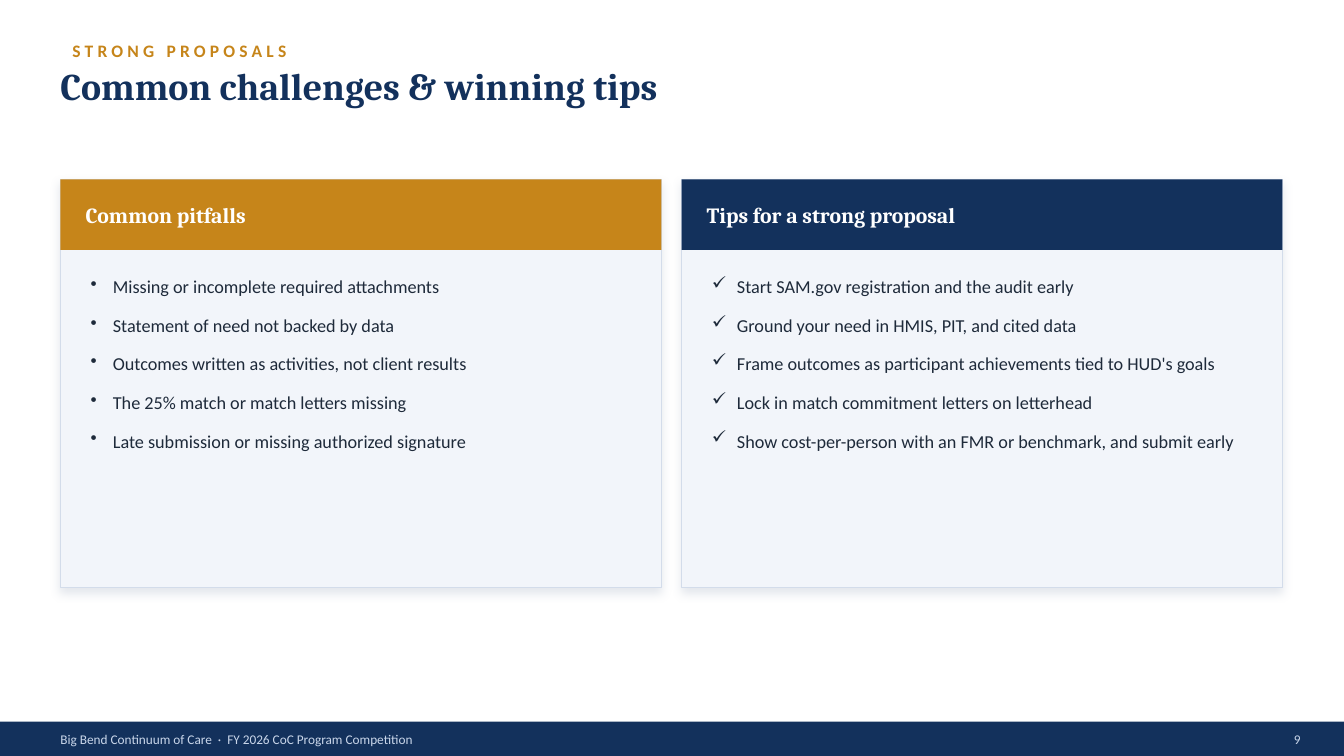
from lxml.etree import SubElement
from pptx import Presentation
from pptx.dml.color import RGBColor
from pptx.enum.shapes import MSO_SHAPE
from pptx.enum.text import MSO_ANCHOR, PP_ALIGN
from pptx.oxml.ns import qn
from pptx.util import Pt

PX = 9144  # EMU per px, 100 px to the inch
PAGE_WIDTH, PAGE_HEIGHT = 1333, 750
MARGIN = 60
NAVY, GOLD, WHITE = "13315C", "C6851A", "FFFFFF"
PANEL, BORDER, SHADOW = "F2F5FA", "D3DCEA", "9AA7BC"
INK, FOOTER_INK = "1E2A3A", "C9D6EA"

PITFALLS = [
    "Missing or incomplete required attachments",
    "Statement of need not backed by data",
    "Outcomes written as activities, not client results",
    "The 25% match or match letters missing",
    "Late submission or missing authorized signature",
]
TIPS = [
    "Start SAM.gov registration and the audit early",
    "Ground your need in HMIS, PIT, and cited data",
    "Frame outcomes as participant achievements tied to HUD's goals",
    "Lock in match commitment letters on letterhead",
    "Show cost-per-person with an FMR or benchmark, and submit early",
]


def color(hex_string):
    return RGBColor.from_string(hex_string)


def scaled(box):
    return [length * PX for length in box]


def add_rect(page, box, fill, line=None):
    rect = page.shapes.add_shape(MSO_SHAPE.RECTANGLE, *scaled(box))
    rect.shadow.inherit = False
    rect.fill.solid()
    rect.fill.fore_color.rgb = color(fill)
    if line:
        rect.line.color.rgb = color(line)
        rect.line.width = Pt(1)
    else:
        rect.line.fill.background()
    return rect


def add_soft_shadow(shape):
    effects = shape._element.spPr.find(qn("a:effectLst"))
    shadow = SubElement(effects, qn("a:outerShdw"), blurRad=str(Pt(7)),
                        dist=str(Pt(3)), dir="5400000", algn="bl",
                        rotWithShape="0")
    tint = SubElement(shadow, qn("a:srgbClr"), val=SHADOW)
    SubElement(tint, qn("a:alpha"), val="28000")


def add_bullet(para, mark, indent):
    properties = para._p.get_or_add_pPr()
    properties.set("marL", str(indent * PX))
    properties.set("indent", str(-indent * PX))
    SubElement(properties, qn("a:buChar"), char=mark)


def add_text(page, box, lines, size, ink, name="Calibri", bold=False,
             anchor=MSO_ANCHOR.MIDDLE, align=PP_ALIGN.LEFT, inset=0,
             bullet=None, gap=0):
    frame = page.shapes.add_textbox(*scaled(box)).text_frame
    frame.word_wrap = True
    frame.vertical_anchor = anchor
    frame.margin_left = frame.margin_right = inset * PX
    frame.margin_top = frame.margin_bottom = 0
    frame.text = "\n".join(lines)
    for para in frame.paragraphs:
        para.alignment = align
        if gap:
            para.space_after = Pt(gap)
        if bullet:
            add_bullet(para, *bullet)
        para.font.size = Pt(size)
        para.font.name = name
        para.font.bold = bold
        para.font.color.rgb = color(ink)
    return frame


def add_heading(page, box):
    left, top, width, height = box
    # Letter-spaced line above the title
    eyebrow = add_text(page, (left + 2, top, 1100, 32), ["STRONG PROPOSALS"],
                       12.5, GOLD, bold=True, inset=10)
    span = eyebrow.paragraphs[0].runs[0]
    span._r.get_or_add_rPr().set("spc", "300")
    # Title
    add_text(page, (left, top + 28, width, height - 28),
             ["Common challenges & winning tips"], 27, NAVY, "Cambria",
             bold=True, anchor=MSO_ANCHOR.TOP)


def add_card(page, box, title, accent, items, bullet):
    left, top, width, height = box
    add_soft_shadow(add_rect(page, box, PANEL, BORDER))
    # Header band
    add_rect(page, (left, top, width, 70), accent)
    add_text(page, (left + 25, top, width - 50, 70), [title], 15.5, WHITE,
             "Cambria", bold=True)
    # Bulleted list
    add_text(page, (left + 30, top + 95, width - 60, height - 120), items,
             13, INK, anchor=MSO_ANCHOR.TOP, bullet=bullet, gap=12)


def add_footer(page, box):
    left, top, width, height = box
    add_rect(page, box, NAVY)
    add_text(page, (left + MARGIN, top, 900, height),
             ["Big Bend Continuum of Care  ·  FY 2026 CoC Program Competition"],
             9.5, FOOTER_INK)
    # Page number
    add_text(page, (left + width - 93, top, 50, height), ["9"], 9.5,
             FOOTER_INK, align=PP_ALIGN.RIGHT)


def main():
    deck = Presentation()
    deck.slide_width, deck.slide_height = scaled((PAGE_WIDTH, PAGE_HEIGHT))
    page = deck.slides.add_slide(deck.slide_layouts[6])
    page.background.fill.solid()
    page.background.fill.fore_color.rgb = color(WHITE)

    add_heading(page, (MARGIN, 34, 1210, 113))
    cards = [
        ("Common pitfalls", GOLD, PITFALLS, ("•", 22)),
        ("Tips for a strong proposal", NAVY, TIPS, ("✓", 25)),
    ]
    card_width, card_gap = 596, 20
    for column, card in enumerate(cards):
        left = MARGIN + column * (card_width + card_gap)
        add_card(page, (left, 178, card_width, 405), *card)
    add_footer(page, (0, PAGE_HEIGHT - 34, PAGE_WIDTH, 34))
    deck.save("out.pptx")


if __name__ == "__main__":
    main()
